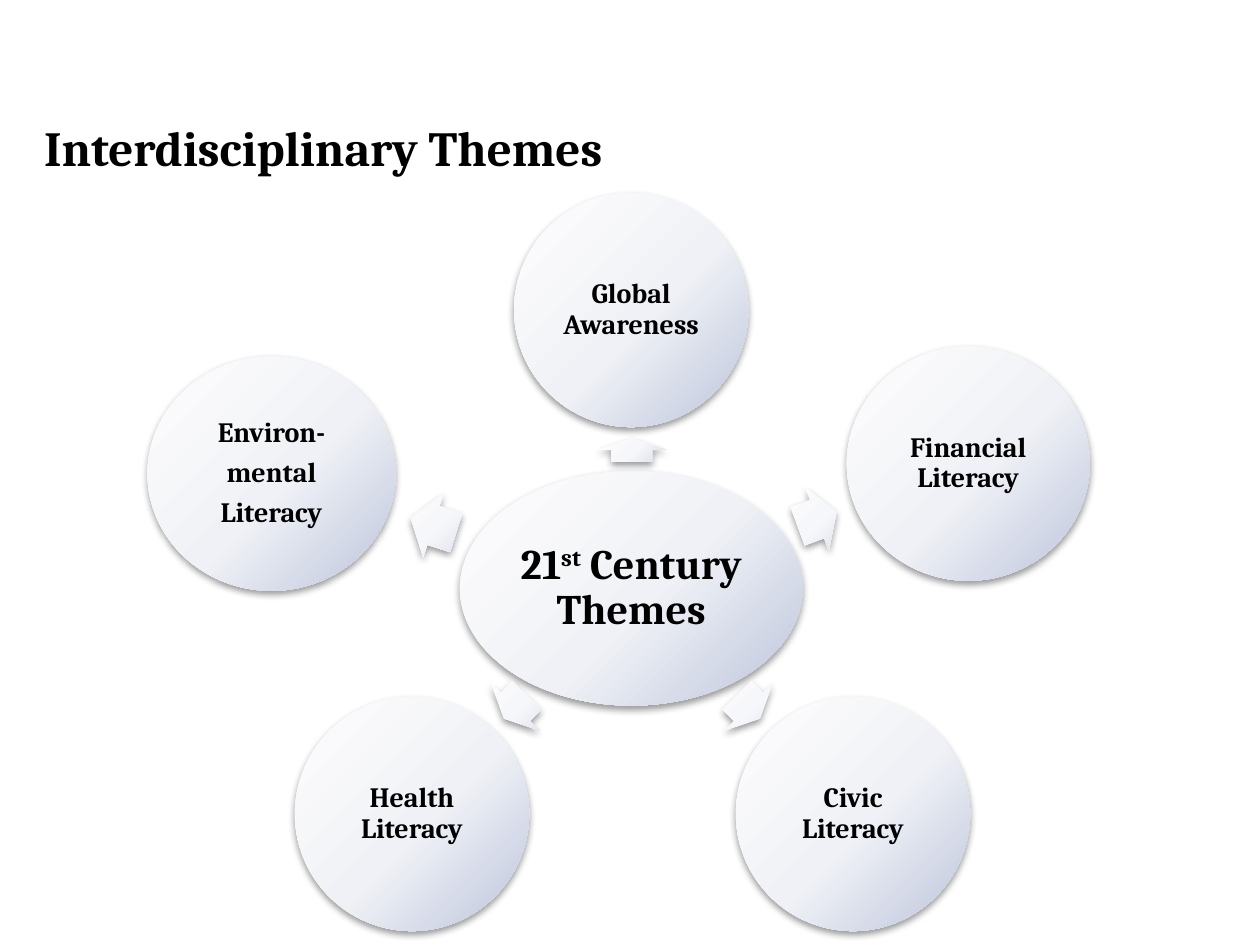
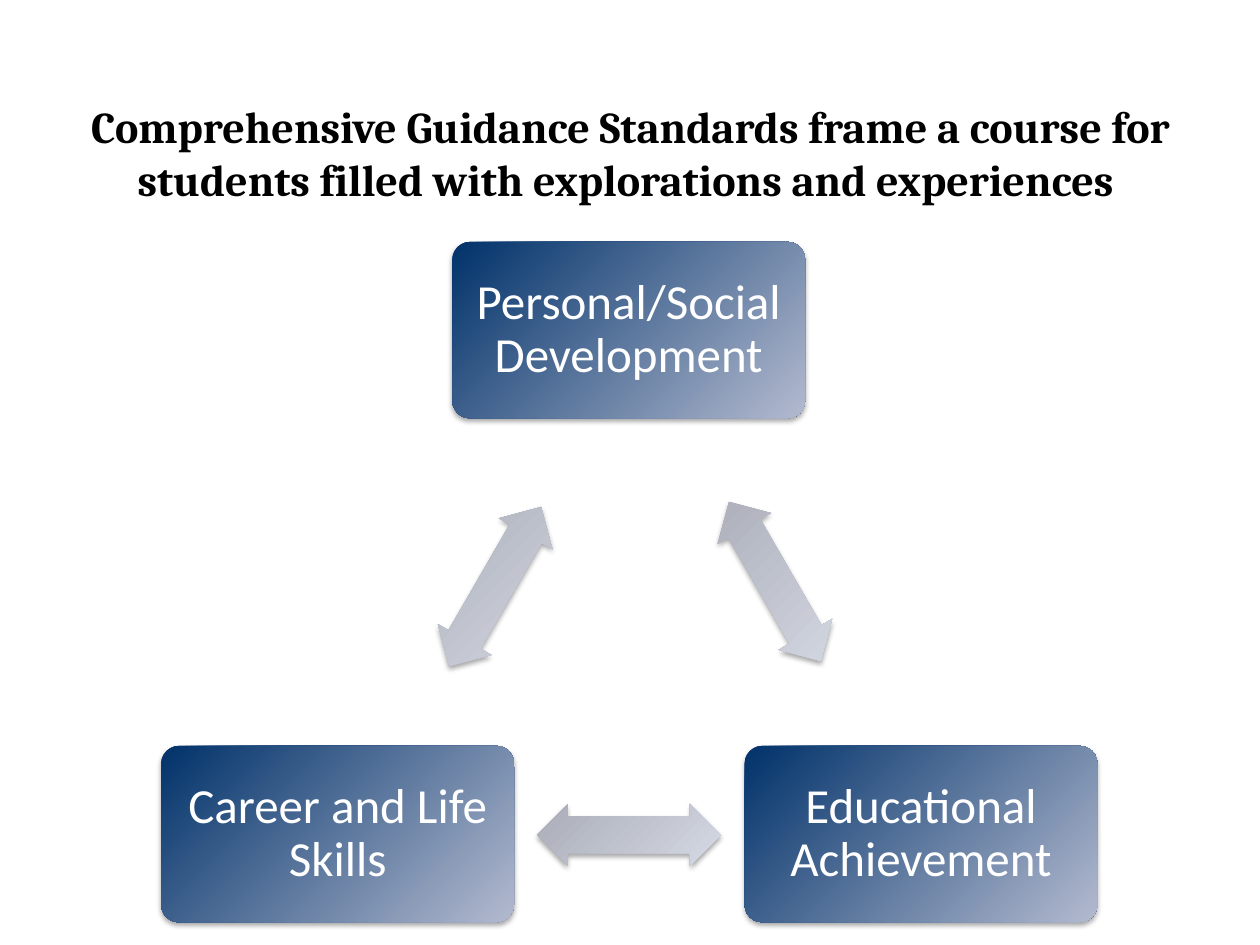
from lxml import etree
from pptx import Presentation
from pptx import util as u
from pptx.dml import color
from pptx.enum import shapes, text
from pptx.oxml import ns

BLACK, WHITE = "000000", "FFFFFF"
PEARL = [(0, "FEFEFE"), (55, "EFF1F6"), (100, "BCC4DB")]
PALE = [(0, "FEFEFF"), (55, "F6F7FA"), (100, "DADEEA")]
NAVY = [(0, "01326A"), (100, "B3BACF")]
GREY = [(0, "AAADB8"), (100, "D5D9E3")]
SOFT = {"alpha": 40, "blur": 4.1, "dist": 2}
CRISP = {"alpha": 35, "blur": 3.1, "dist": 1.8}

deck = Presentation()
deck.slide_width, deck.slide_height = u.Inches(10), u.Inches(7.5)


def add_figure(slide, kind, box, stops, shadow, rotation=0, adjustments=()):
    figure = slide.shapes.add_shape(kind, *map(u.Inches, box))
    figure.rotation = rotation
    for i, value in enumerate(adjustments):
        figure.adjustments[i] = value
    figure.line.fill.background()
    figure.fill.gradient()
    figure.fill.gradient_angle = 315
    figure.shadow.inherit = False
    properties = figure._element.spPr
    gradient = properties.find(ns.qn("a:gradFill"))
    gradient.set("rotWithShape", "0")
    stop_list = gradient.find(ns.qn("a:gsLst"))
    for stop in list(stop_list):
        stop_list.remove(stop)
    for position, shade in stops:
        stop = etree.SubElement(stop_list, ns.qn("a:gs"), pos=str(position * 1000))
        etree.SubElement(stop, ns.qn("a:srgbClr"), val=shade)
    outer = etree.SubElement(
        properties.find(ns.qn("a:effectLst")), ns.qn("a:outerShdw"),
        blurRad=str(u.Pt(shadow["blur"])), dist=str(u.Pt(shadow["dist"])),
        dir="5400000", rotWithShape="0")
    shade = etree.SubElement(outer, ns.qn("a:srgbClr"), val=BLACK)
    etree.SubElement(shade, ns.qn("a:alpha"), val=str(shadow["alpha"] * 1000))
    return figure


def write(shape, lines, size, font, shade, bold, centred=True, inset=None):
    frame = shape.text_frame
    frame.word_wrap = True
    frame.auto_size = text.MSO_AUTO_SIZE.NONE
    frame.vertical_anchor = text.MSO_ANCHOR.MIDDLE
    frame.text = "\n".join(lines)
    if inset is not None:
        frame.margin_left = frame.margin_right = u.Inches(inset)
        frame.margin_top = frame.margin_bottom = u.Inches(inset)
    for paragraph in frame.paragraphs:
        paragraph.alignment = text.PP_ALIGN.CENTER if centred else text.PP_ALIGN.LEFT
        if inset is not None:
            paragraph.line_spacing = 0.9
            paragraph.space_after = u.Pt(size * 0.35)
        paragraph.font.size = u.Pt(size)
        paragraph.font.name = font
        paragraph.font.bold = bold
        paragraph.font.color.rgb = color.RGBColor.from_string(shade)


titles = [
    ("Interdisciplinary Themes", (0.25, 0.83, 9.25, 0.67), 28, False),
    ("Comprehensive Guidance Standards frame a course for students filled "
     "with explorations and experiences ", (0.17, 0.75, 9.67, 0.92), 25.2, True),
]
slides = []
for wording, box, size, centred in titles:
    slide = deck.slides.add_slide(deck.slide_layouts[5])
    title = slide.shapes.title
    title.left, title.top, title.width, title.height = map(u.Inches, box)
    write(title, [wording], size, "Cambria", BLACK, True, centred)
    slides.append(slide)
themes_slide, standards_slide = slides

hub = add_figure(themes_slide, shapes.MSO_SHAPE.OVAL, (3.65, 3.74, 2.72, 1.86), PEARL, SOFT)
write(hub, [""], 24, "Cambria", BLACK, True, inset=0.03)
for wording, baseline in [("21", 0), ("st", 30000), (" Century Themes", 0)]:
    run = hub.text_frame.paragraphs[0].add_run()
    run.text = wording
    if baseline:
        run._r.get_or_add_rPr().set("baseline", str(baseline))

themes = [
    (["Global Awareness"], 4.08, 1.53, 1.86, (4.92, 3.3, 0.19), 270),
    (["Financial Literacy"], 6.72, 2.75, 1.93, (6.32, 3.85, 0.33), 339.7),
    (["Civic Literacy"], 5.84, 5.53, 1.86, (5.81, 5.34, 0.26), 45.4),
    (["Health Literacy"], 2.34, 5.53, 1.86, (3.96, 5.34, 0.26), 134.2),
    (["Environ-", "mental", "Literacy"], 1.17, 2.83, 1.97, (3.25, 3.9, 0.38), 197.6),
]
for lines, left, top, width, arrow, rotation in themes:
    add_figure(themes_slide, shapes.MSO_SHAPE.RIGHT_ARROW, (*arrow, 0.54),
               PALE, SOFT, rotation, (0.6, 0.5))
    theme = add_figure(themes_slide, shapes.MSO_SHAPE.OVAL, (left, top, width, 1.86), PEARL, SOFT)
    write(theme, lines, 16, "Cambria", BLACK, True, inset=0.02)

standards = [
    ("Personal/Social Development", 3.59, 1.92, (5.42, 4.37), 60),
    ("Educational Achievement", 5.91, 5.92, (4.26, 6.38), 180),
    ("Career and Life Skills", 1.28, 5.92, (3.2, 4.41), 300),
]
for wording, left, top, arrow, rotation in standards:
    standard = add_figure(standards_slide, shapes.MSO_SHAPE.ROUNDED_RECTANGLE,
                          (left, top, 2.8, 1.4), NAVY, CRISP, adjustments=(0.1,))
    write(standard, [wording], 28, "Calibri", WHITE, False, inset=0.12)
    add_figure(standards_slide, shapes.MSO_SHAPE.LEFT_RIGHT_ARROW, (*arrow, 1.46, 0.49),
               GREY, CRISP, rotation, (0.6, 0.5))

deck.save("out.pptx")
